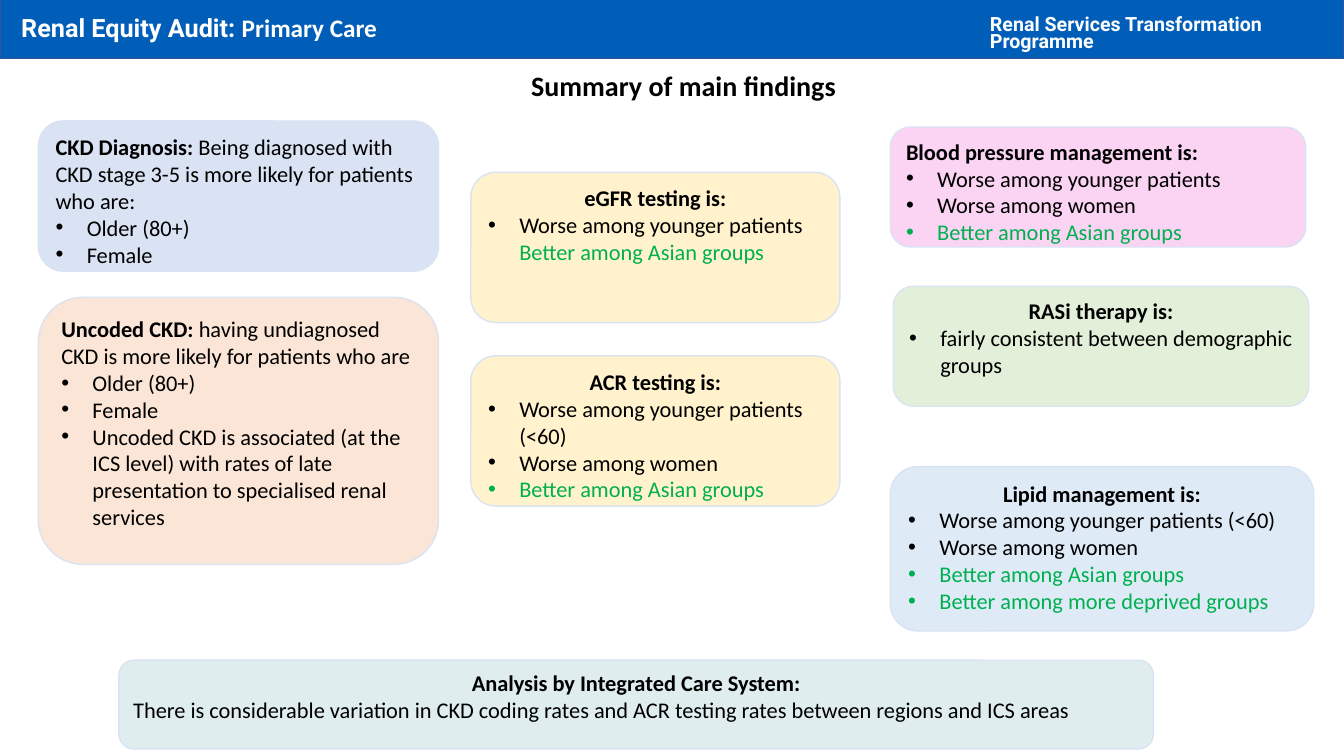
"""Build the primary care slide of the renal equity audit."""
import dataclasses

import lxml.etree
import pptx
import pptx.dml.color
import pptx.enum.shapes
import pptx.enum.text
import pptx.oxml.ns
import pptx.util

WIDE, HIGH = 13.33, 7.5
BLUE, EDGE, RIM = "005EB8", "325491", "DAE3F3"
WHITE, BLACK, GREEN = "FFFFFF", "000000", "00B050"
LEFT, MID, RIGHT = 2.85, 35.03, 66.24
SHAPE = pptx.enum.shapes.MSO_SHAPE
ALIGN = pptx.enum.text.PP_ALIGN


@dataclasses.dataclass(frozen=True)
class Run:
    """A piece of text in one format."""
    text: str
    bold: bool = False
    color: str = BLACK
    size: int = 16
    font: str = "Calibri"


@dataclasses.dataclass(frozen=True)
class Para:
    """A line of runs, centred or bulleted if asked."""
    runs: tuple[Run, ...]
    center: bool = False
    bullet: bool = False


@dataclasses.dataclass(frozen=True)
class Box:
    """A place in percent of the slide's width and height."""
    left: float
    top: float
    width: float
    height: float

    def place(self) -> tuple[int, ...]:
        """Return left, top, width and height as lengths."""
        return tuple(pptx.util.Inches(part * side / 100) for part, side in (
            (self.left, WIDE), (self.top, HIGH), (self.width, WIDE), (self.height, HIGH)))


@dataclasses.dataclass(frozen=True)
class Card:
    """A rounded panel with its findings."""
    box: Box
    fill: str
    paras: tuple[Para, ...]


def head(text: str, center: bool = True) -> Para:
    """Return a bold heading line."""
    return Para((Run(text, True),), center)


def lead(label: str, text: str) -> Para:
    """Return a line that opens with a bold label."""
    return Para((Run(label, True), Run(text)))


def items(*texts: str, color: str = BLACK) -> tuple[Para, ...]:
    """Return one bulleted line for each text."""
    return tuple(Para((Run(text, color=color),), bullet=True) for text in texts)


YOUNG, WOMEN, ASIAN = "Worse among younger patients", "Worse among women", "Better among Asian groups"
CARDS = (
    Card(Box(LEFT, 39.33, 29.78, 35.33), "FBE5D6", (
        lead("Uncoded CKD: ", "having undiagnosed CKD is more likely for patients who are"),
        *items("Older (80+)", "Female",
               "Uncoded CKD is associated (at the ICS level) with rates of late "
               "presentation to specialised renal services"))),
    Card(Box(MID, 47.07, 27.46, 19.87), "FFF2CC", (
        head("ACR testing is:"), *items(f"{YOUNG} (<60)", WOMEN), *items(ASIAN, color=GREEN))),
    Card(Box(RIGHT, 61.73, 31.51, 21.73), "DEEBF7", (
        head("Lipid management is:"), *items(f"{YOUNG} (<60)", WOMEN),
        *items(ASIAN, "Better among more deprived groups", color=GREEN))),
    Card(Box(LEFT, 16, 29.78, 19.87), RIM, (
        lead("CKD Diagnosis: ",
             "Being diagnosed with CKD stage 3-5 is more likely for patients who are:"),
        *items("Older (80+)", "Female"))),
    Card(Box(66.47, 37.87, 30.91, 15.87), "E2F0D9", (
        head("RASi therapy is:"), *items("fairly consistent between demographic groups"))),
    Card(Box(RIGHT, 16.8, 30.91, 15.87), "FAD4F2", (
        head("Blood pressure management is:", False), *items(YOUNG, WOMEN),
        *items(ASIAN, color=GREEN))),
    Card(Box(8.85, 87.33, 76.97, 11.73), "E0EDEE", (
        head("Analysis by Integrated Care System:"),
        Para((Run("There is considerable variation in CKD coding rates and ACR testing rates "
                  "between regions and ICS areas"),)))),
    Card(Box(MID, 22.8, 27.46, 19.87), "FFF2CC", (
        head("eGFR testing is:"),
        Para((Run(f"{YOUNG} "), Run(ASIAN, color=GREEN)), bullet=True))),
)


def tint(code: str) -> pptx.dml.color.RGBColor:
    """Turn a hex string into a colour."""
    return pptx.dml.color.RGBColor.from_string(code)


def mark(para) -> None:
    """Give a paragraph a hanging bullet."""
    props = para._p.get_or_add_pPr()
    indent = pptx.util.Inches(0.31)
    props.set("marL", str(indent))
    props.set("indent", str(-indent))
    for tag, name, value in (("a:buFont", "typeface", "Arial"), ("a:buChar", "char", "•")):
        lxml.etree.SubElement(props, pptx.oxml.ns.qn(tag)).set(name, value)


def write(shape, paras: tuple[Para, ...]) -> None:
    """Fill a shape with wrapped text from its top."""
    frame = shape.text_frame
    frame.word_wrap = True
    frame.auto_size = pptx.enum.text.MSO_AUTO_SIZE.NONE
    frame.vertical_anchor = pptx.enum.text.MSO_ANCHOR.TOP
    for place, item in enumerate(paras):
        para = frame.add_paragraph() if place else frame.paragraphs[0]
        para.alignment = ALIGN.CENTER if item.center else ALIGN.LEFT
        if item.bullet:
            mark(para)
        for part in item.runs:
            run = para.add_run()
            run.text = part.text
            run.font.name = part.font
            run.font.size = pptx.util.Pt(part.size)
            run.font.bold = part.bold
            run.font.color.rgb = tint(part.color)


def panel(slide, kind: SHAPE, box: Box, fill: str, line: str):
    """Draw a filled shape with a thin outline."""
    shape = slide.shapes.add_shape(kind, *box.place())
    shape.shadow.inherit = False
    shape.fill.solid()
    shape.fill.fore_color.rgb = tint(fill)
    shape.line.color.rgb = tint(line)
    shape.line.width = pptx.util.Pt(1)
    return shape


def label(slide, box: Box, run: Run):
    """Draw a text box with one run."""
    shape = slide.shapes.add_textbox(*box.place())
    write(shape, (Para((run,)),))
    return shape


def banner(slide) -> None:
    """Draw the top bar with the title and the programme."""
    title = slide.shapes.title
    bar = panel(slide, SHAPE.RECTANGLE, Box(0, -0.27, 100, 8), BLUE, EDGE)
    title.element.addprevious(bar.element)
    title.left, title.top, title.width, title.height = Box(0.83, 0.93, 59.94, 9.47).place()
    write(title, (Para((Run("Renal Equity Audit: ", True, WHITE, 18, "Roboto"),
                        Run("Primary Care", True, WHITE, 18))),))
    name = label(slide, Box(72.92, 1.87, 28.13, 3.73),
                 Run("Renal Services Transformation Programme", True, WHITE, 14, "Roboto"))
    name.text_frame.paragraphs[0].line_spacing = pptx.util.Pt(12)


def main() -> None:
    """Build and save the slide."""
    deck = pptx.Presentation()
    deck.slide_width, deck.slide_height = pptx.util.Inches(WIDE), pptx.util.Inches(HIGH)
    slide = deck.slides.add_slide(deck.slide_layouts[5])
    banner(slide)
    label(slide, Box(38.78, 8.4, 26.56, 5.87), Run("Summary of main findings", True, size=20))
    for card in CARDS:
        write(panel(slide, SHAPE.ROUNDED_RECTANGLE, card.box, card.fill, RIM), card.paras)
    deck.save("out.pptx")


if __name__ == "__main__":
    main()
